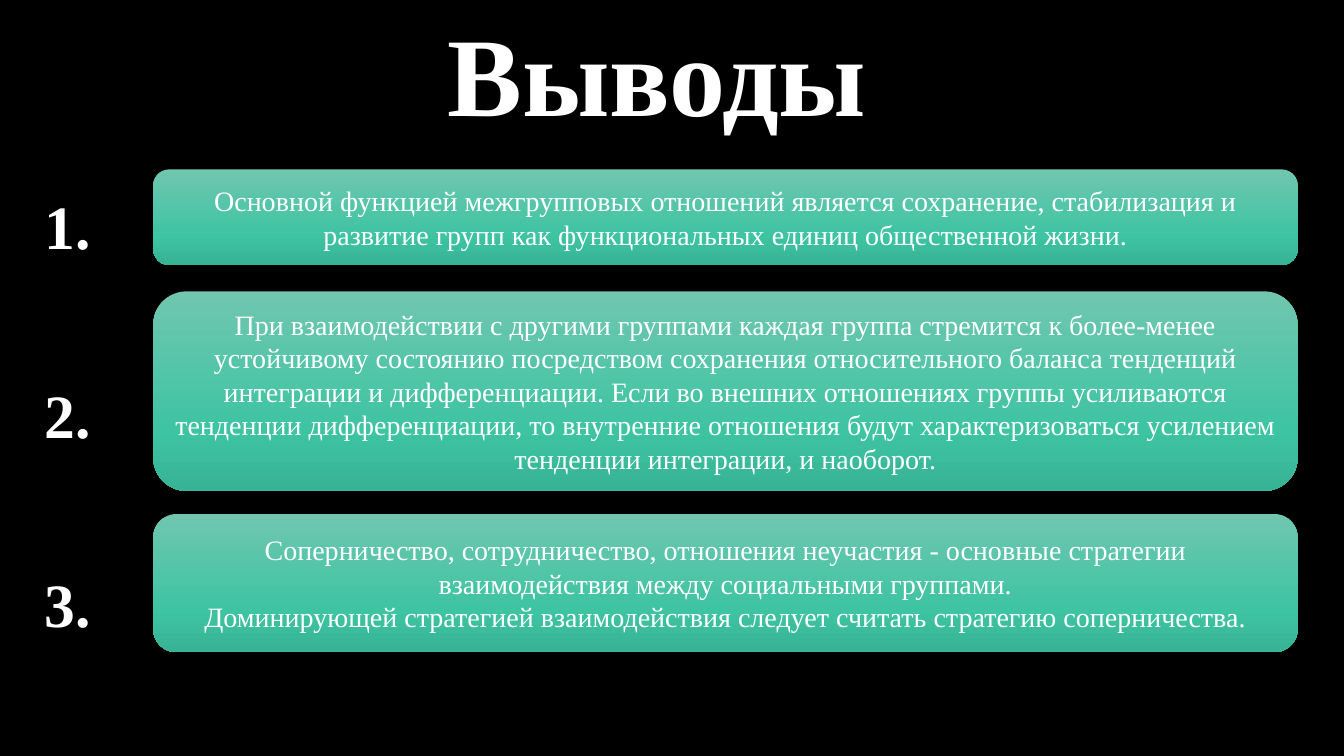
from copy import deepcopy
from dataclasses import dataclass
from typing import Any

from pptx import Presentation
from pptx import util as u
from pptx.dml.color import RGBColor
from pptx.enum import shapes, text
from pptx.oxml.ns import qn

PX = u.Inches(1) // 100  # one px is a hundredth of an inch


@dataclass(frozen=True)
class Theme:
    font: str = "Times New Roman"
    background: str = "000000"
    ink: str = "FFFFFF"
    gradient: tuple = ((0, "70C6AF"), (0.69, "3EC4A3"), (1, "37B395"))
    title_size: int = 80
    number_size: int = 44
    body_size: int = 20


@dataclass(frozen=True)
class Box:
    left: int
    top: int
    width: int
    height: int

    def emu(self) -> list[int]:
        return [v * PX for v in (self.left, self.top, self.width, self.height)]


@dataclass(frozen=True)
class Conclusion:
    number_top: int
    card_top: int
    card_height: int
    wording: str


THEME = Theme()
TITLE_BOX = Box(416, 0, 472, 145)
CONCLUSIONS = (
    Conclusion(182, 168, 95, "Основной функцией межгрупповых отношений является сохранение, "
               "стабилизация и развитие групп как функциональных единиц общественной жизни."),
    Conclusion(369, 289, 198, "При взаимодействии с другими группами каждая группа стремится "
               "к более-менее устойчивому состоянию посредством сохранения относительного "
               "баланса тенденций интеграции и дифференциации. Если во внешних отношениях "
               "группы усиливаются тенденции дифференциации, то внутренние отношения будут "
               "характеризоваться усилением тенденции интеграции, и наоборот."),
    Conclusion(557, 510, 137, "Соперничество, сотрудничество, отношения неучастия - основные "
               "стратегии взаимодействия между социальными группами.\n"
               "Доминирующей стратегией взаимодействия следует считать стратегию "
               "соперничества."),
)


def set_attributes(target: Any, values: dict[str, Any]) -> None:
    for name, value in values.items():
        setattr(target, name, value)


def write(shape: Any, wording: str, size: int, bold: bool, frame_format: dict[str, Any]) -> None:
    set_attributes(shape.text_frame, {"word_wrap": True, **frame_format})
    paragraph = shape.text_frame.paragraphs[0]
    paragraph.text = wording
    paragraph.alignment = text.PP_ALIGN.CENTER
    for run in paragraph.runs:
        set_attributes(run.font, {"name": THEME.font, "size": u.Pt(size), "bold": bold})
        run.font.color.rgb = RGBColor.from_string(THEME.ink)


def add_heading(slide: Any, box: Box, wording: str, size: int) -> None:
    shape = slide.shapes.add_textbox(*box.emu())
    write(shape, wording, size, True, {"auto_size": text.MSO_AUTO_SIZE.SHAPE_TO_FIT_TEXT})


def fill_gradient(shape: Any) -> None:
    shape.fill.gradient()
    shape.fill.gradient_angle = 270
    stop_list = shape._element.spPr.find(".//" + qn("a:gsLst"))
    stop_list.append(deepcopy(stop_list[-1]))
    for stop, (position, color) in zip(shape.fill.gradient_stops, THEME.gradient):
        stop.position = position
        stop.color.rgb = RGBColor.from_string(color)


def add_card(slide: Any, box: Box, wording: str) -> None:
    shape = slide.shapes.add_shape(shapes.MSO_SHAPE.ROUNDED_RECTANGLE, *box.emu())
    shape.shadow.inherit = False
    shape.line.fill.background()
    fill_gradient(shape)
    write(shape, wording, THEME.body_size, False, {"vertical_anchor": text.MSO_ANCHOR.MIDDLE})


def main() -> None:
    presentation = Presentation()
    set_attributes(presentation, {"slide_width": 1333 * PX, "slide_height": 750 * PX})
    slide = presentation.slides.add_slide(presentation.slide_layouts[6])

    # Background
    slide.background.fill.solid()
    slide.background.fill.fore_color.rgb = RGBColor.from_string(THEME.background)

    # Title
    add_heading(slide, TITLE_BOX, "Выводы", THEME.title_size)

    # Numbered conclusions
    for number, item in enumerate(CONCLUSIONS, start=1):
        add_heading(slide, Box(28, item.number_top, 79, 84), f"{number}.", THEME.number_size)
        add_card(slide, Box(152, item.card_top, 1135, item.card_height), item.wording)

    presentation.save("out.pptx")


if __name__ == "__main__":
    main()
